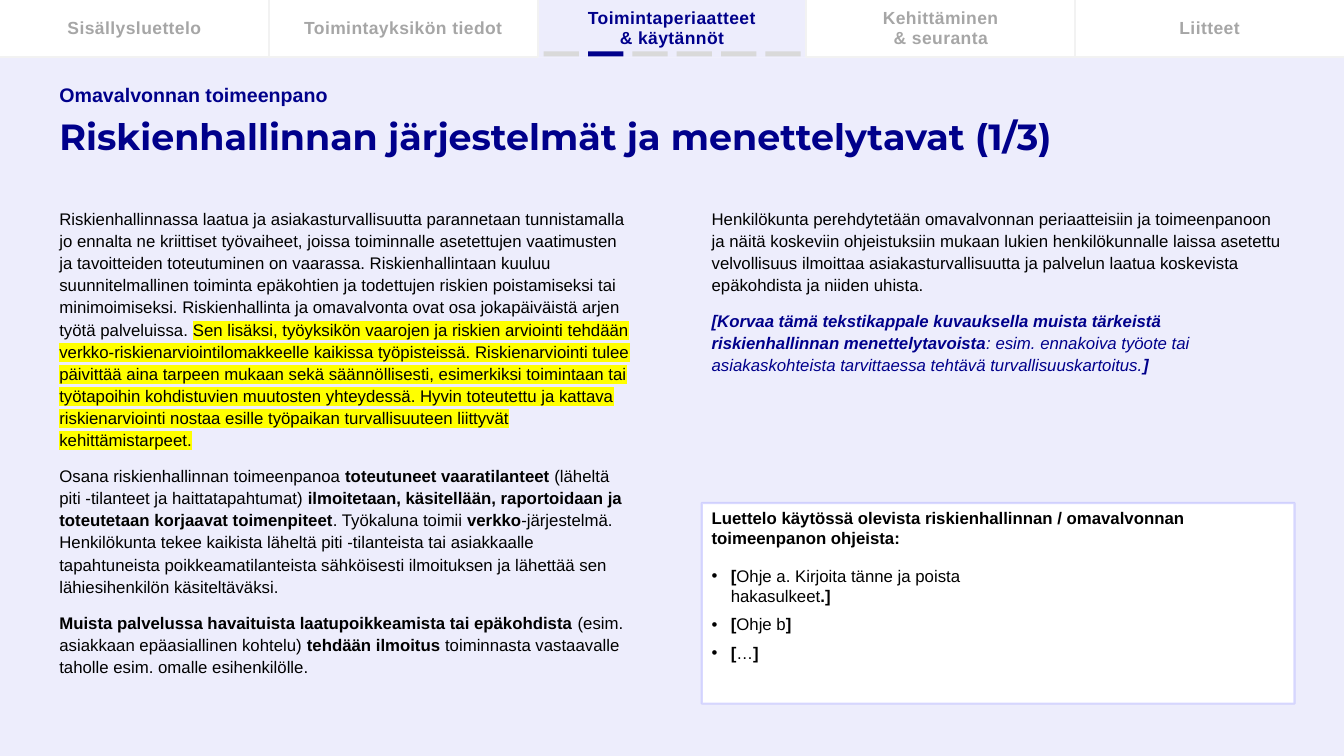
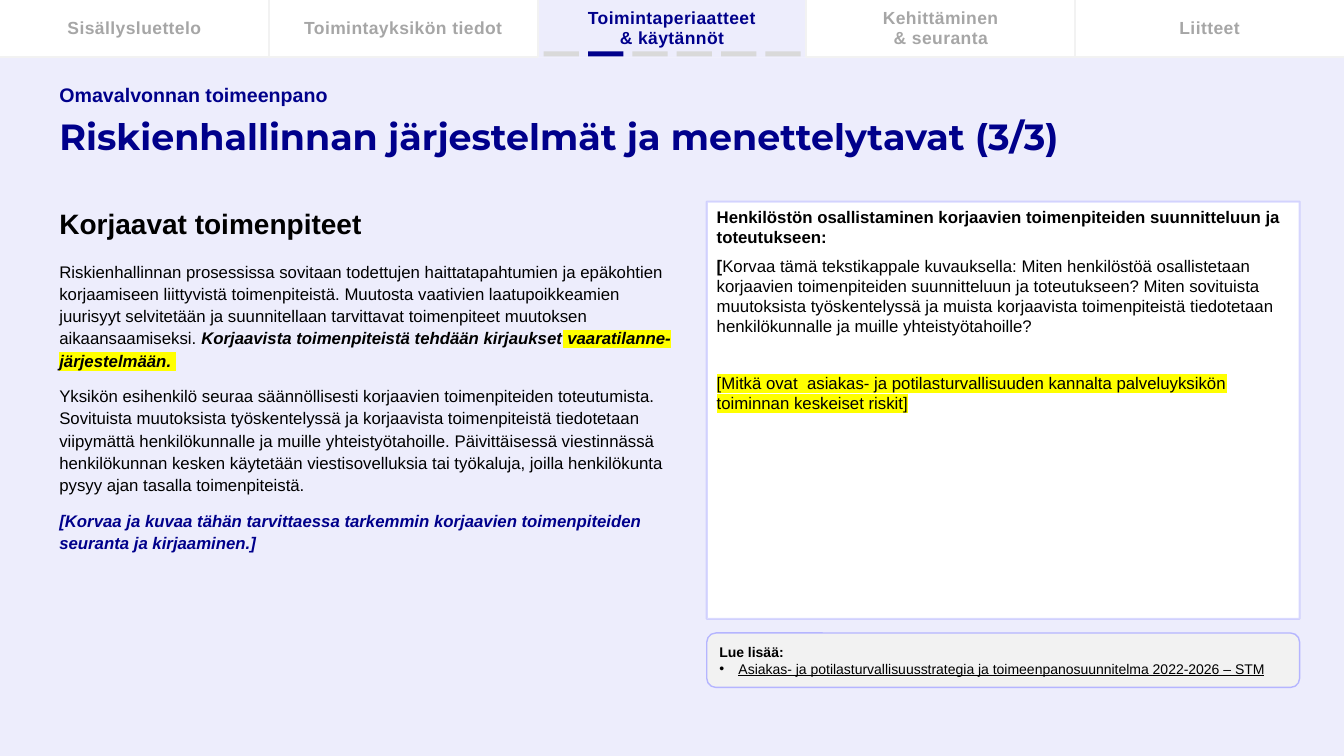
import pptx
import pptx.dml.color
import pptx.enum.shapes
import pptx.enum.text
import pptx.oxml.ns
import pptx.util
from dataclasses import dataclass
from lxml import etree

Inches = pptx.util.Inches
Pt = pptx.util.Pt
SHAPE = pptx.enum.shapes.MSO_SHAPE
MIDDLE = pptx.enum.text.MSO_ANCHOR.MIDDLE
TOP = pptx.enum.text.MSO_ANCHOR.TOP
LEFT = pptx.enum.text.PP_ALIGN.LEFT
CENTER = pptx.enum.text.PP_ALIGN.CENTER

COLORS = {
    "page": "EDEDFC",
    "white": "FFFFFF",
    "navy": "00008B",
    "text": "000000",
    "inactive": "A6A6A6",
    "step": "D9D9D9",
    "pale": "F2F2F2",
    "border": "B5B5FF",
    "marker": "FFFF00",
}
BODY_FONT, TITLE_FONT = "Arial", "Montserrat"

SLIDE_W, SLIDE_H = 13.33, 7.5
HEADER_H = 0.57
TABS = ["Sisällysluettelo", "Toimintayksikön tiedot",
        "Toimintaperiaatteet\n& käytännöt", "Kehittäminen\n& seuranta", "Liitteet"]
ACTIVE_TAB = 2
TAB_W = SLIDE_W / len(TABS)
STEPS, ACTIVE_STEP = 6, 1
MARGIN, CONTENT_TOP = 0.49, 2
COLUMN_W, RIGHT_COLUMN = 5.88, 6.96


@dataclass
class Para:
    """Runs are (text, marks); marks: b bold, i italic, u underline, h highlight."""
    runs: list
    size: float = 12
    color: str = "text"
    font: str = BODY_FONT
    line: object = None
    before: float = 0
    after: float = 0
    bullet: bool = False
    align: object = LEFT
    tracking: int = 0


def prose(*runs, color="text", first=False):
    return Para(list(runs), color=color, line=1.1, before=0 if first else 7.9, after=1.8)


def rgb(name):
    return pptx.dml.color.RGBColor.from_string(COLORS[name])


def sub(parent, tag, **attributes):
    return etree.SubElement(parent, pptx.oxml.ns.qn(tag), attributes)


def add_run(paragraph, text, marks, style):
    run = paragraph.add_run()
    run.text = text
    font = run.font
    font.size = Pt(style.size)
    font.bold, font.italic = "b" in marks, "i" in marks
    if "u" in marks:
        font.underline = True
    font.color.rgb = rgb(style.color)
    properties = run._r.get_or_add_rPr()
    if style.tracking:
        properties.set("spc", str(style.tracking))
    if "h" in marks:
        sub(sub(properties, "a:highlight"), "a:srgbClr", val=COLORS["marker"])
    font.name = style.font


def write(frame, paras, anchor=TOP, inset=0.05):
    frame.word_wrap = True
    frame.vertical_anchor = anchor
    frame.margin_left = frame.margin_right = Inches(0.1)
    frame.margin_top = frame.margin_bottom = Inches(inset)
    for index, para in enumerate(paras):
        paragraph = frame.add_paragraph() if index else frame.paragraphs[0]
        paragraph.alignment = para.align
        if para.line:
            paragraph.line_spacing = para.line
        paragraph.space_before = Pt(para.before)
        paragraph.space_after = Pt(para.after)
        if para.bullet:
            properties = paragraph._p.get_or_add_pPr()
            hang = Inches(0.19)
            properties.set("marL", str(hang))
            properties.set("indent", str(-hang))
            sub(properties, "a:buFont", typeface=BODY_FONT)
            sub(properties, "a:buChar", char="•")
        for text, marks in para.runs:
            for number, row in enumerate(text.split("\n")):
                if number:
                    paragraph.add_line_break()
                add_run(paragraph, row, marks, para)


def add_text(slide, box, paras, **layout):
    write(slide.shapes.add_textbox(*map(Inches, box)).text_frame, paras, **layout)


def add_panel(slide, box, fill, kind=SHAPE.RECTANGLE, border=0, opacity=100):
    panel = slide.shapes.add_shape(kind, *map(Inches, box))
    panel.shadow.inherit = False
    panel.fill.solid()
    panel.fill.fore_color.rgb = rgb(fill)
    if border:
        panel.line.width = Pt(border)
        panel.line.color.rgb = rgb("border")
        if opacity < 100:
            color = panel.line._ln.find(".//" + pptx.oxml.ns.qn("a:srgbClr"))
            sub(color, "a:alpha", val=str(opacity * 1000))
    else:
        panel.line.fill.background()
    return panel


def add_rule(slide, *ends):
    rule = slide.shapes.add_connector(
        pptx.enum.shapes.MSO_CONNECTOR.STRAIGHT, *map(Inches, ends))
    rule.line.width = Pt(1.5)
    rule.line.color.rgb = rgb("pale")
    sub(rule._element.spPr, "a:effectLst")


def add_navigation(slide):
    active_left = ACTIVE_TAB * TAB_W
    add_panel(slide, (0, 0, SLIDE_W, HEADER_H), "white")
    add_panel(slide, (active_left, 0, TAB_W, HEADER_H), "page")
    for index, label in enumerate(TABS):
        left = index * TAB_W
        color = "navy" if index == ACTIVE_TAB else "inactive"
        add_text(slide, (left, 0, TAB_W, 0.56),
                 [Para([(label, "b")], 12.5, color, line=Pt(14), align=CENTER, tracking=30)],
                 anchor=MIDDLE)
        if index:
            add_rule(slide, left, 0, left, HEADER_H)
    add_rule(slide, 0, HEADER_H, active_left, HEADER_H)
    add_rule(slide, active_left + TAB_W, HEADER_H, SLIDE_W, HEADER_H)
    for step in range(STEPS):
        add_panel(slide, (active_left + 0.06 + step * 0.44, 0.51, 0.35, 0.05),
                  "navy" if step == ACTIVE_STEP else "step")


def add_content_slide(deck, part):
    slide = deck.slides.add_slide(deck.slide_layouts[6])
    slide.background.fill.solid()
    slide.background.fill.fore_color.rgb = rgb("page")
    add_navigation(slide)
    add_text(slide, (MARGIN, 0.82, 4, 0.24),
             [Para([("Omavalvonnan toimeenpano", "b")], 14, "navy")], anchor=MIDDLE, inset=0)
    title = f"Riskienhallinnan järjestelmät ja menettelytavat ({part}/3)"
    add_text(slide, (MARGIN, 0.9, 12.35, 0.95),
             [Para([(title, "b")], 26, "navy", TITLE_FONT, line=0.9)], anchor=MIDDLE)
    return slide


def add_instruction_list(slide, box, heading, items):
    left, top, width, height = box
    heading_h = 0.57
    add_panel(slide, box, "white", border=1.5, opacity=50)
    add_text(slide, (left, top, width - 0.27, heading_h), [Para([(heading, "b")])])
    add_text(slide, (left, top + heading_h, width / 2 + 0.1, height - heading_h),
             [Para([("[", "b"), (item, ""), (end, "b")], after=6, bullet=True)
              for item, end in items])


def add_read_more(slide, box, source):
    panel = add_panel(slide, box, "pale", SHAPE.ROUNDED_RECTANGLE, border=1)
    write(panel.text_frame,
          [Para([("Lue lisää:", "b")], 10), Para([(source, "u")], 10, bullet=True)],
          anchor=MIDDLE)


def build_procedures(deck):
    slide = add_content_slide(deck, 1)
    add_text(slide, (MARGIN, CONTENT_TOP, COLUMN_W, 4.78), [
        prose(
            ("Riskienhallinnassa laatua ja asiakasturvallisuutta parannetaan tunnistamalla jo "
             "ennalta ne kriittiset työvaiheet, joissa toiminnalle asetettujen vaatimusten ja "
             "tavoitteiden toteutuminen on vaarassa. Riskienhallintaan kuuluu suunnitelmallinen "
             "toiminta epäkohtien ja todettujen riskien poistamiseksi tai minimoimiseksi. "
             "Riskienhallinta ja omavalvonta ovat osa jokapäiväistä arjen työtä palveluissa. ", ""),
            ("Sen lisäksi, työyksikön vaarojen ja riskien arviointi tehdään "
             "verkko-riskienarviointilomakkeelle kaikissa työpisteissä. Riskienarviointi tulee "
             "päivittää aina tarpeen mukaan sekä säännöllisesti, esimerkiksi toimintaan tai "
             "työtapoihin kohdistuvien muutosten yhteydessä. Hyvin toteutettu ja kattava "
             "riskienarviointi nostaa esille työpaikan turvallisuuteen liittyvät "
             "kehittämistarpeet.", "h"),
            first=True),
        prose(
            ("Osana riskienhallinnan toimeenpanoa ", ""),
            ("toteutuneet vaaratilanteet ", "b"),
            ("(läheltä piti -tilanteet ja haittatapahtumat) ", ""),
            ("ilmoitetaan, käsitellään, raportoidaan ja toteutetaan korjaavat toimenpiteet", "b"),
            (". Työkaluna toimii ", ""),
            ("verkko", "b"),
            ("-järjestelmä. Henkilökunta tekee kaikista läheltä piti -tilanteista tai asiakkaalle "
             "tapahtuneista poikkeamatilanteista sähköisesti ilmoituksen ja lähettää sen "
             "lähiesihenkilön käsiteltäväksi.", "")),
        prose(
            ("Muista palvelussa havaituista laatupoikkeamista tai epäkohdista ", "b"),
            ("(esim. asiakkaan epäasiallinen kohtelu) ", ""),
            ("tehdään ilmoitus ", "b"),
            ("toiminnasta vastaavalle taholle esim. omalle esihenkilölle.", "")),
    ])
    add_text(slide, (RIGHT_COLUMN, CONTENT_TOP, COLUMN_W, 2.8), [
        prose(
            ("Henkilökunta perehdytetään omavalvonnan periaatteisiin ja toimeenpanoon ja näitä "
             "koskeviin ohjeistuksiin mukaan lukien henkilökunnalle laissa asetettu velvollisuus "
             "ilmoittaa asiakasturvallisuutta ja palvelun laatua koskevista epäkohdista ja niiden "
             "uhista.", ""),
            first=True),
        prose(
            ("[Korvaa tämä tekstikappale kuvauksella muista tärkeistä riskienhallinnan "
             "menettelytavoista", "bi"),
            (": esim. ennakoiva työote tai asiakaskohteista tarvittaessa tehtävä "
             "turvallisuuskartoitus.", "i"),
            ("]", "bi"),
            color="navy"),
    ])
    add_instruction_list(
        slide, (RIGHT_COLUMN, 4.99, COLUMN_W, 1.99),
        "Luettelo käytössä olevista riskienhallinnan / omavalvonnan toimeenpanon ohjeista:",
        [("Ohje a. Kirjoita tänne ja poista hakasulkeet", ".]"), ("Ohje b", "]"), ("…", "]")])


def build_corrective_actions(deck):
    slide = add_content_slide(deck, 3)
    add_text(slide, (MARGIN, CONTENT_TOP, 6.4, 4.69), [
        Para([("Korjaavat toimenpiteet", "b")], 20, after=6),
        prose(
            ("Riskienhallinnan prosessissa sovitaan todettujen haittatapahtumien ja epäkohtien "
             "korjaamiseen liittyvistä toimenpiteistä. Muutosta vaativien laatupoikkeamien "
             "juurisyyt selvitetään ja suunnitellaan tarvittavat toimenpiteet muutoksen "
             "aikaansaamiseksi. ", ""),
            ("Korjaavista toimenpiteistä tehdään kirjaukset", "bi"),
            (" vaaratilanne-järjestelmään. ", "bih")),
        prose(
            ("Yksikön esihenkilö seuraa säännöllisesti korjaavien toimenpiteiden toteutumista. "
             "Sovituista muutoksista työskentelyssä ja korjaavista toimenpiteistä tiedotetaan "
             "viipymättä henkilökunnalle ja muille yhteistyötahoille. Päivittäisessä viestinnässä "
             "henkilökunnan kesken käytetään viestisovelluksia tai työkaluja, joilla henkilökunta "
             "pysyy ajan tasalla toimenpiteistä.", "")),
        prose(
            ("[Korvaa ja kuvaa tähän tarvittaessa tarkemmin korjaavien toimenpiteiden seuranta ja "
             "kirjaaminen.]", "bi"),
            color="navy"),
    ])
    right = RIGHT_COLUMN + 0.05
    participation = add_panel(slide, (right, CONTENT_TOP, COLUMN_W, 4.14), "white",
                              border=1.5, opacity=50)
    write(participation.text_frame, [
        Para([("Henkilöstön osallistaminen korjaavien toimenpiteiden suunnitteluun ja "
               "toteutukseen:", "b")], after=6),
        Para([("[", "b"),
              ("Korvaa tämä tekstikappale kuvauksella: Miten henkilöstöä osallistetaan korjaavien "
               "toimenpiteiden suunnitteluun ja toteutukseen? Miten sovituista muutoksista "
               "työskentelyssä ja muista korjaavista toimenpiteistä tiedotetaan henkilökunnalle "
               "ja muille yhteistyötahoille?", "")], after=6),
        Para([("[Mitkä ovat  asiakas- ja potilasturvallisuuden kannalta palveluyksikön "
               "toiminnan keskeiset riskit]", "h")], before=20),
    ])
    add_read_more(
        slide, (right, 6.28, COLUMN_W, 0.54),
        "Asiakas- ja potilasturvallisuusstrategia ja toimeenpanosuunnitelma 2022-2026 – STM")


def main():
    deck = pptx.Presentation()
    deck.slide_width, deck.slide_height = Inches(SLIDE_W), Inches(SLIDE_H)
    build_procedures(deck)
    build_corrective_actions(deck)
    deck.save("out.pptx")


if __name__ == "__main__":
    main()
